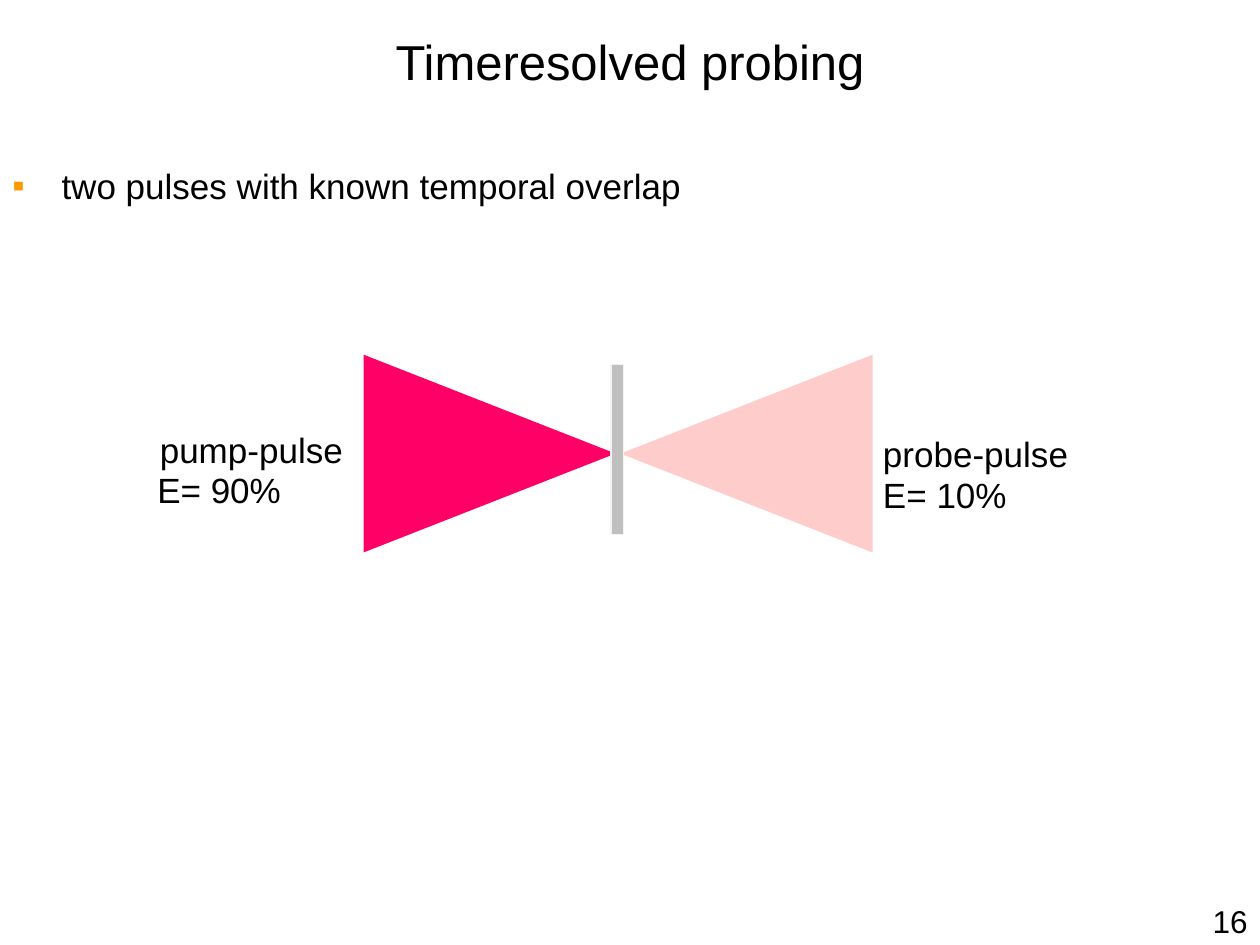
from lxml.etree import SubElement
from pptx import Presentation
from pptx.dml.color import RGBColor
from pptx.enum.shapes import MSO_SHAPE as Shape
from pptx.enum.text import MSO_ANCHOR as Anchor, PP_ALIGN as Align
from pptx.oxml.ns import qn
from pptx.util import Inches, Pt

COLORS = {
    "text": "000000",
    "bullet": "FF9900",
    "pump": "FF0066",
    "probe": "FFCCCC",
    "sample": "BFBFBF",
    "sample_edge": "F2F2F2",
}


def color(name):
    return RGBColor.from_string(COLORS[name])


def add_bullet(paragraph, indent):
    properties = paragraph._p.get_or_add_pPr()
    properties.set("marL", str(Inches(indent)))
    properties.set("indent", str(-Inches(indent)))
    bullet_color = SubElement(properties, qn("a:buClr"))
    SubElement(bullet_color, qn("a:srgbClr"), val=COLORS["bullet"])
    SubElement(properties, qn("a:buFont"), typeface="Arial")
    SubElement(properties, qn("a:buChar"), char="▪")


def add_text(slide, box, text, size=20, align=Align.LEFT, anchor=Anchor.TOP, indent=None):
    shape = slide.shapes.add_textbox(*map(Inches, box))
    frame = shape.text_frame
    frame.word_wrap = True
    frame.vertical_anchor = anchor
    paragraph = frame.paragraphs[0]
    paragraph.text = text
    paragraph.alignment = align
    if indent:
        add_bullet(paragraph, indent)
    paragraph.font.name = "Arial"
    paragraph.font.size = Pt(size)
    paragraph.font.color.rgb = color("text")


def add_filled(slide, kind, box, fill, edge=None, rotation=0):
    shape = slide.shapes.add_shape(kind, *map(Inches, box))
    shape.shadow.inherit = False
    shape.rotation = rotation
    shape.fill.solid()
    shape.fill.fore_color.rgb = color(fill)
    if edge:
        shape.line.color.rgb = color(edge)
        shape.line.width = Pt(0.75)
    else:
        shape.line.fill.background()


def add_pulse_diagram(slide, left, top):
    beam_width, beam_length = 1.57, 2
    for offset, fill, rotation in ((0, "pump", 90), (2.04, "probe", 270)):
        box = (left + offset, top, beam_width, beam_length)
        add_filled(slide, Shape.ISOSCELES_TRIANGLE, box, fill, rotation=rotation)
    add_filled(slide, Shape.RECTANGLE, (left + 1.75, top + 0.29, 0.1, 1.35),
               "sample", edge="sample_edge")

    labels = (
        (-1.93, 0.75, 1.73, "pump-pulse"),
        (-1.95, 1.07, 2.26, "E= 90%"),
        (3.81, 0.78, 2.36, "probe-pulse"),
        (3.81, 1.11, 2.26, "E= 10%"),
    )
    for x, y, width, text in labels:
        add_text(slide, (left + x, top + y, width, 0.44), text)


def main():
    presentation = Presentation()
    presentation.slide_width = Inches(10)
    presentation.slide_height = Inches(7.5)
    slide = presentation.slides.add_slide(presentation.slide_layouts[6])

    add_text(slide, (0, 0, 10, 0.96), "Timeresolved probing", size=28,
             align=Align.CENTER, anchor=Anchor.MIDDLE)
    add_text(slide, (0, 1.26, 6.56, 0.43), "two pulses with known temporal overlap",
             indent=0.39)
    add_pulse_diagram(slide, 3.1, 2.6)
    add_text(slide, (9.39, 7.11, 0.61, 0.4), "16", size=18, align=Align.RIGHT)

    presentation.save("out.pptx")


if __name__ == "__main__":
    main()
